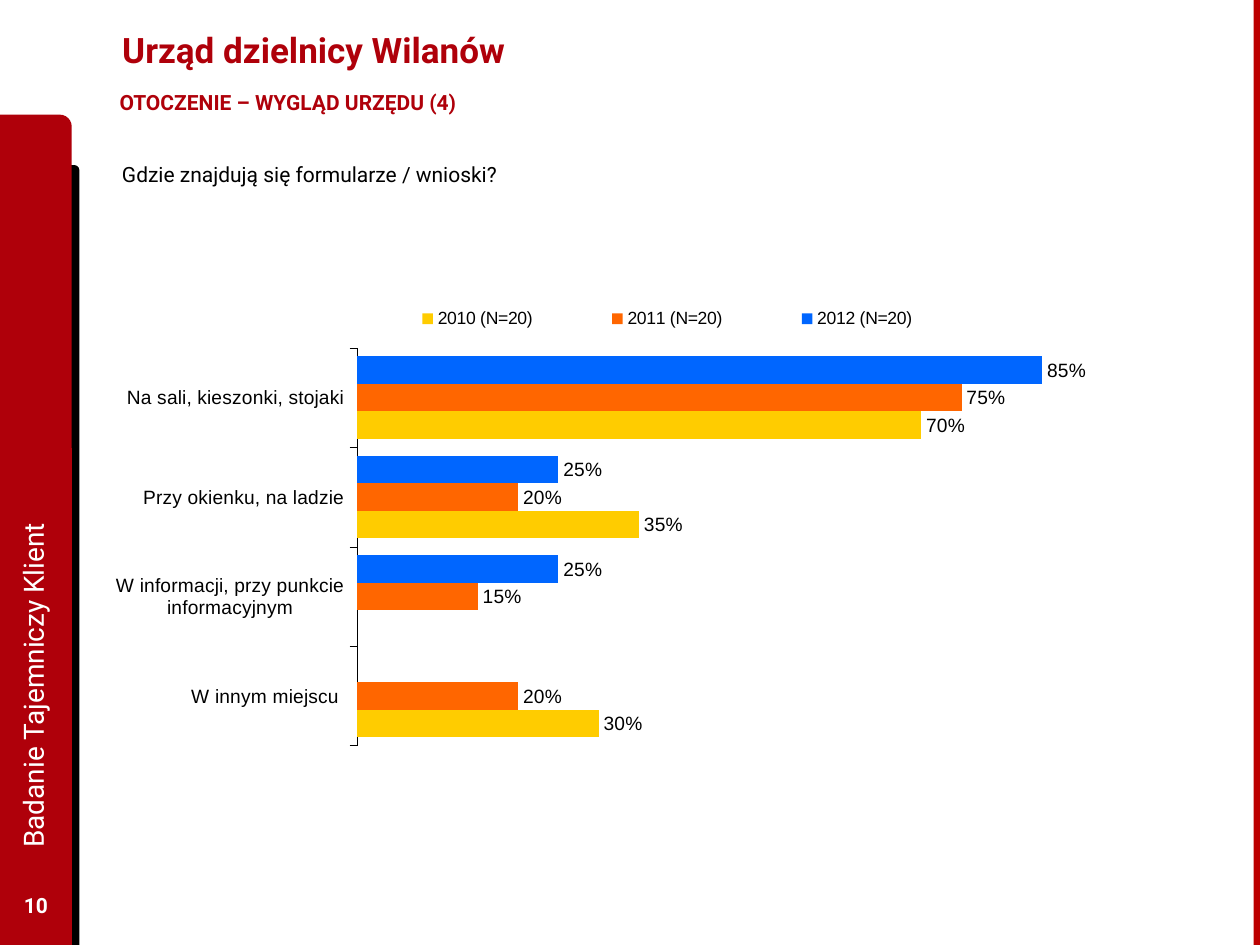
import pptx
import pptx.chart.data
import pptx.dml.color
import pptx.enum.chart
import pptx.enum.shapes
import pptx.enum.text
import pptx.oxml
import pptx.oxml.ns
import pptx.util
from pptx.util import Inches

RED = "AF000A"
BLACK = "000000"
WHITE = "FFFFFF"
TEXT_FONT = "Roboto"
CHART_FONT = "Arial"

CATEGORIES = [
    "Na sali, kieszonki, stojaki",
    "Przy okienku, na ladzie",
    "W informacji, przy punkcie informacyjnym",
    "W innym miejscu ",
]
YEARS = [
    ("2012 (N=20)", [0.85, 0.25, 0.25, None], "0066FF"),
    ("2011 (N=20)", [0.75, 0.20, 0.15, 0.20], "FF6600"),
    ("2010 (N=20)", [0.70, 0.35, None, 0.30], "FFCC00"),
]


def rgb(value):
    return pptx.dml.color.RGBColor.from_string(value)


def style_font(font, size, color, name=TEXT_FONT, bold=False):
    font.name = name
    font.size = pptx.util.Pt(size)
    font.bold = bold
    font.color.rgb = rgb(color)


def write(shape, text, size, color, bold=False, align="LEFT", anchor="MIDDLE", wrap=True):
    frame = shape.text_frame
    frame.text = text
    frame.word_wrap = wrap
    frame.auto_size = pptx.enum.text.MSO_AUTO_SIZE.NONE
    frame.vertical_anchor = getattr(pptx.enum.text.MSO_ANCHOR, anchor)
    paragraph = frame.paragraphs[0]
    paragraph.alignment = getattr(pptx.enum.text.PP_ALIGN, align)
    for run in paragraph.runs:
        style_font(run.font, size, color, bold=bold)


def add_block(slide, preset, left, top, width, height, color):
    block = slide.shapes.add_shape(preset, left, top, width, height)
    block.shadow.inherit = False
    block.fill.solid()
    block.fill.fore_color.rgb = rgb(color)
    block.line.fill.background()


def add_sidebar(slide, left, top, width, height):
    """Red tab with its black edge, the study name and the page number."""
    tab = pptx.enum.shapes.MSO_SHAPE.ROUND_1_RECTANGLE
    drop = Inches(0.4)
    add_block(slide, tab, left + Inches(0.39), top + drop, Inches(0.24), height - drop, BLACK)
    add_block(slide, tab, left, top, width, height, RED)

    study = slide.shapes.add_textbox(
        left - Inches(2.62), top + Inches(2.78), Inches(5.76), Inches(0.51))
    study.rotation = 270
    write(study, "Badanie Tajemniczy Klient", 16, WHITE)

    page = slide.shapes.add_textbox(left, top + Inches(6.07), width, Inches(0.4))
    write(page, "10", 12, WHITE, bold=True, align="CENTER")


def add_heading(slide, left, top, width, height):
    title = slide.shapes.title
    title.left, title.top, title.width, title.height = left, top, width, Inches(0.72)
    write(title, "Urząd dzielnicy Wilanów", 20, RED, bold=True)

    section = slide.shapes.add_textbox(
        left - Inches(0.12), top + Inches(0.63), Inches(3.85), Inches(0.33))
    write(section, "OTOCZENIE – WYGLĄD URZĘDU (4)", 12, RED, bold=True,
          anchor="TOP", wrap=False)
    section.text_frame.margin_left = section.text_frame.margin_right = Inches(0.2)

    question_height = Inches(0.3)
    question = slide.shapes.add_textbox(
        left, top + height - question_height, Inches(3.94), question_height)
    write(question, "Gdzie znajdują się formularze / wnioski?", 12, BLACK, anchor="TOP")


def set_layout(element, x, y, w, h, inner=False):
    """Place a chart part by fractions of the chart's size."""
    target = '<c:layoutTarget val="inner"/>' if inner else ""
    sizes = "".join(f'<c:{key} val="{value}"/>' for key, value in zip("xywh", (x, y, w, h)))
    layout = pptx.oxml.parse_xml(
        f'<c:layout {pptx.oxml.ns.nsdecls("c")}><c:manualLayout>{target}'
        f'<c:xMode val="edge"/><c:yMode val="edge"/>{sizes}</c:manualLayout></c:layout>')
    for old in element.findall(pptx.oxml.ns.qn("c:layout")):
        element.remove(old)
    position = element.find(pptx.oxml.ns.qn("c:legendPos"))
    if position is None:
        element.insert(0, layout)
    else:
        position.addnext(layout)


def add_answers_chart(slide, left, top, width, height):
    data = pptx.chart.data.CategoryChartData(number_format="0%")
    data.categories = CATEGORIES
    for name, values, _ in YEARS:
        data.add_series(name, values)
    chart = slide.shapes.add_chart(
        pptx.enum.chart.XL_CHART_TYPE.BAR_CLUSTERED, left, top, width, height, data).chart
    chart.has_title = False
    style_font(chart.font, 11, BLACK, CHART_FONT)

    chart.has_legend = True
    legend = chart.legend
    legend.position = pptx.enum.chart.XL_LEGEND_POSITION.TOP
    legend.include_in_layout = False
    style_font(legend.font, 10.1, BLACK, CHART_FONT)
    set_layout(legend._element, 0.2, 0.01, 0.56, 0.07)

    answers = chart.category_axis
    answers.reverse_order = True
    answers.major_tick_mark = pptx.enum.chart.XL_TICK_MARK.OUTSIDE
    answers.format.line.color.rgb = rgb(BLACK)
    answers.format.line.width = pptx.util.Pt(0.23)
    style_font(answers.tick_labels.font, 11, BLACK, CHART_FONT)

    share = chart.value_axis
    share.minimum_scale = 0
    share.maximum_scale = 0.9
    share.has_major_gridlines = False
    share.visible = False

    plot = chart.plots[0]
    plot.gap_width = 60
    plot.overlap = 0
    plot.vary_by_categories = False
    set_layout(chart._chartSpace.chart.plotArea, 0.207, 0.113, 0.638, 0.89, inner=True)
    for series, (_, _, color) in zip(plot.series, YEARS):
        series.format.fill.solid()
        series.format.fill.fore_color.rgb = rgb(color)
        labels = series.data_labels
        labels.show_value = True
        labels.number_format = "0%"
        labels.number_format_is_linked = False
        labels.position = pptx.enum.chart.XL_LABEL_POSITION.OUTSIDE_END
        style_font(labels.font, 11, BLACK, CHART_FONT)


def main():
    deck = pptx.Presentation()
    deck.slide_width, deck.slide_height = Inches(10), Inches(7.5)
    slide = deck.slides.add_slide(deck.slide_layouts.get_by_name("Title Only"))
    add_sidebar(slide, Inches(0), Inches(0.91), Inches(0.57), Inches(6.59))
    add_block(slide, pptx.enum.shapes.MSO_SHAPE.RECTANGLE,
              Inches(9.95), Inches(0), Inches(0.05), Inches(7.5), "BD0000")
    add_heading(slide, Inches(0.87), Inches(0.03), Inches(7.77), Inches(1.5))
    add_answers_chart(slide, Inches(0.92), Inches(2.37), Inches(9.07), Inches(3.55))
    deck.save("out.pptx")


if __name__ == "__main__":
    main()
